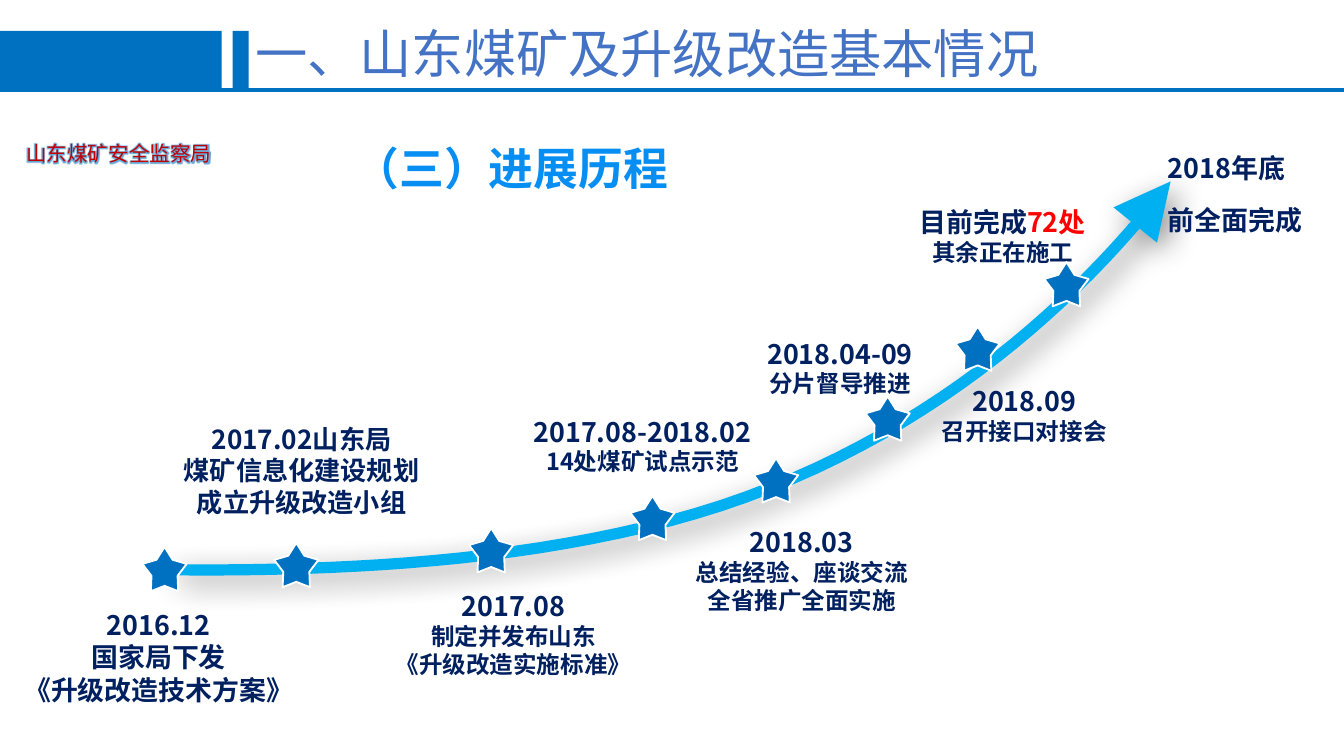
"""Build the project timeline slide with a rising arrow and star milestones."""
import pptx
import pptx.dml.color
import pptx.enum.shapes
import pptx.enum.text
import pptx.oxml
import pptx.oxml.ns
import pptx.util

RGB = pptx.dml.color.RGBColor
BLUE = RGB(0x00, 0x70, 0xC0)
SKY = RGB(0x00, 0xB0, 0xF0)
NAVY = RGB(0x00, 0x20, 0x60)
RED = RGB(0xFF, 0x00, 0x00)
DARK_RED = RGB(0xC0, 0x00, 0x00)
TITLE_BLUE = RGB(0x44, 0x72, 0xC4)
HEADING_BLUE = RGB(0x07, 0x8E, 0xF3)
WHITE = RGB(0xFF, 0xFF, 0xFF)

FONT = "Noto Sans CJK SC"
LABEL_FONT = "Noto Sans CJK JP"
BIG, SMALL = 14.4, 12.6
LINE_RATIO = 1.2
COLUMNS, ROWS = 100, 56.25
STAR = 3.3
CURVE_STEPS = 24

TITLE = "一、山东煤矿及升级改造基本情况"
HEADING = "（三）进展历程"
BUREAU = "山东煤矿安全监察局"
BANNERS = [(0, 16.5), (17.3, 1.2)]

LABELS = [
    (-1.1, 44.8, 25.8, BIG, BIG, ["2016.12", "国家局下发", "《升级改造技术方案》"]),
    (10.8, 31, 23.3, 14, 14, ["2017.02山东局", "煤矿信息化建设规划", "成立升级改造小组"]),
    (24.6, 43.4, 27.2, BIG, SMALL, ["2017.08", "制定并发布山东", "《升级改造实施标准》"]),
    (37.8, 30.4, 20, BIG, SMALL, ["2017.08-2018.02", "14处煤矿试点示范"]),
    (50.7, 38.6, 17.9, BIG, SMALL, ["2018.03", "总结经验、座谈交流", "全省推广全面实施"]),
    (53.9, 24.6, 17.2, BIG, SMALL, ["2018.04-09", "分片督导推进"]),
    (67.6, 28.1, 17.2, BIG, SMALL, ["2018.09", "召开接口对接会"]),
    (66, 14.8, 17.2, BIG, SMALL, ["目前完成|72处", "其余正在施工"]),
]
GOAL = ["2018年底", "前全面完成"]
STARS = [(10.6, 40.7), (20.4, 40.4), (34.9, 39.3), (46.9, 36.9),
         (56.1, 34.1), (64.4, 29.5), (71.1, 24.3), (77.7, 19.5)]
CURVES = [
    [(12.8, 42.4), (24.8, 42.5), (43.1, 42), (57.3, 36.3)],
    [(57.3, 36.3), (71.5, 30.7), (81.5, 20.9), (87.1, 13.5)],
]

SHADOW = (
    '<a:effectLst {}><a:outerShdw blurRad="203200" dist="76200" dir="3000000" '
    'algn="ctr" rotWithShape="0"><a:srgbClr val="000000"><a:alpha val="43000"/>'
    '</a:srgbClr></a:outerShdw></a:effectLst>'
)
GLOW = (
    '<a:effectLst {}><a:glow rad="38100"><a:srgbClr val="0070C0">'
    '<a:alpha val="60000"/></a:srgbClr></a:glow></a:effectLst>'
)
NAMESPACE = pptx.oxml.ns.nsdecls("a")

deck = pptx.Presentation()
deck.slide_width = pptx.util.Inches(10)
deck.slide_height = deck.slide_width * 9 // 16
page = deck.slides.add_slide(deck.slide_layouts[5])


def across(columns):
    return round(deck.slide_width * columns / COLUMNS)


def down(rows):
    return round(deck.slide_height * rows / ROWS)


def place(left, top, width, height):
    return across(left), down(top), across(width), down(height)


def xml(markup):
    return pptx.oxml.parse_xml(markup.format(NAMESPACE))


def style_span(span, size, color, bold, font):
    span.font.size = pptx.util.Pt(size)
    span.font.bold = bold
    span.font.color.rgb = color
    span.font.name = font
    east = xml('<a:ea {} typeface="' + font.replace("Arial", FONT) + '"/>')
    span.font._element.find(pptx.oxml.ns.qn("a:latin")).addnext(east)


def write(box, lines, sizes, color, bold=True, font=FONT, align="LEFT", spacing=None):
    frame = box.text_frame
    frame.word_wrap = True
    frame.vertical_anchor = pptx.enum.text.MSO_ANCHOR.TOP
    frame.text = "\n".join(line.replace("|", "") for line in lines)
    for para, line, size in zip(frame.paragraphs, lines, sizes):
        para.alignment = getattr(pptx.enum.text.PP_ALIGN, align)
        para.line_spacing = pptx.util.Pt(spacing or round(size * LINE_RATIO, 1))
        plain, _, accent = line.partition("|")
        para.runs[0].text = plain
        style_span(para.runs[0], size, color, bold, font)
        if accent:
            span = para.add_run()
            span.text = accent
            style_span(span, size, RED, bold, font)
    return box


def add_text(area, *args, **options):
    return write(page.shapes.add_textbox(*place(*area)), *args, **options)


def add_shape(kind, area, line=None):
    shape = page.shapes.add_shape(kind, *place(*area))
    shape.shadow.inherit = False
    shape.fill.solid()
    shape.fill.fore_color.rgb = BLUE
    if line is None:
        shape.line.fill.background()
    else:
        shape.line.color.rgb = line
        shape.line.width = pptx.util.Pt(1)
    return shape


def curve_point(controls, share):
    rest = 1 - share
    weights = (rest ** 3, 3 * rest ** 2 * share, 3 * rest * share ** 2, share ** 3)
    x, y = (sum(w * p for w, p in zip(weights, axis)) for axis in zip(*controls))
    return across(x), down(y)


def add_arrow():
    points = [curve_point(controls, step / CURVE_STEPS)
              for controls in CURVES for step in range(1, CURVE_STEPS + 1)]
    builder = page.shapes.build_freeform(*curve_point(CURVES[0], 0))
    builder.add_line_segments(points, close=False)
    arrow = builder.convert_to_shape()
    arrow.fill.background()
    arrow.line.color.rgb = SKY
    arrow.line.width = pptx.util.Pt(6)
    outline = arrow.line._get_or_add_ln()
    outline.append(xml("<a:round {}/>"))
    outline.append(xml('<a:tailEnd {} type="triangle" w="lg" len="lg"/>'))
    outline.addnext(xml(SHADOW))


for left, width in BANNERS:
    add_shape(pptx.enum.shapes.MSO_SHAPE.RECTANGLE, (left, 2.3, width, 4.3))
rule = page.shapes.add_connector(
    pptx.enum.shapes.MSO_CONNECTOR.STRAIGHT, 0, down(6.7), across(COLUMNS), down(6.7))
rule.line.color.rgb = BLUE
rule.line.width = pptx.util.Pt(2)
rule._element.spPr.append(xml("<a:effectLst {}/>"))

bureau = add_text((-1.6, 10, 20.9, 2.9), [BUREAU], [11], DARK_RED,
                  bold=False, font=LABEL_FONT, align="CENTER")
bureau_font = bureau.text_frame.paragraphs[0].runs[0].font
bureau_font._element.find(pptx.oxml.ns.qn("a:solidFill")).addnext(xml(GLOW))

title = page.shapes.title
title.left, title.top, title.width, title.height = place(18, 1.1, 60.9, 5.7)
write(title, [TITLE], [28], TITLE_BLUE, bold=False)
title.text_frame.word_wrap = False

add_arrow()
for left, top, width, first, other, lines in LABELS:
    sizes = [first] + [other] * (len(lines) - 1)
    height = 1 + sum(sizes) * LINE_RATIO / 7.2
    add_text((left, top, width, height), lines, sizes, NAVY, align="CENTER")
add_text((85.9, 9.3, 12, 8.9), GOAL, [BIG] * len(GOAL), NAVY, spacing=28)
add_text((25.4, 10, 32.4, 5), [HEADING], [24], HEADING_BLUE, font="Arial")
for left, top in STARS:
    star = add_shape(pptx.enum.shapes.MSO_SHAPE.STAR_5_POINT, (left, top, STAR, STAR), WHITE)
    star.adjustments[0] = 0.294

deck.save("out.pptx")
